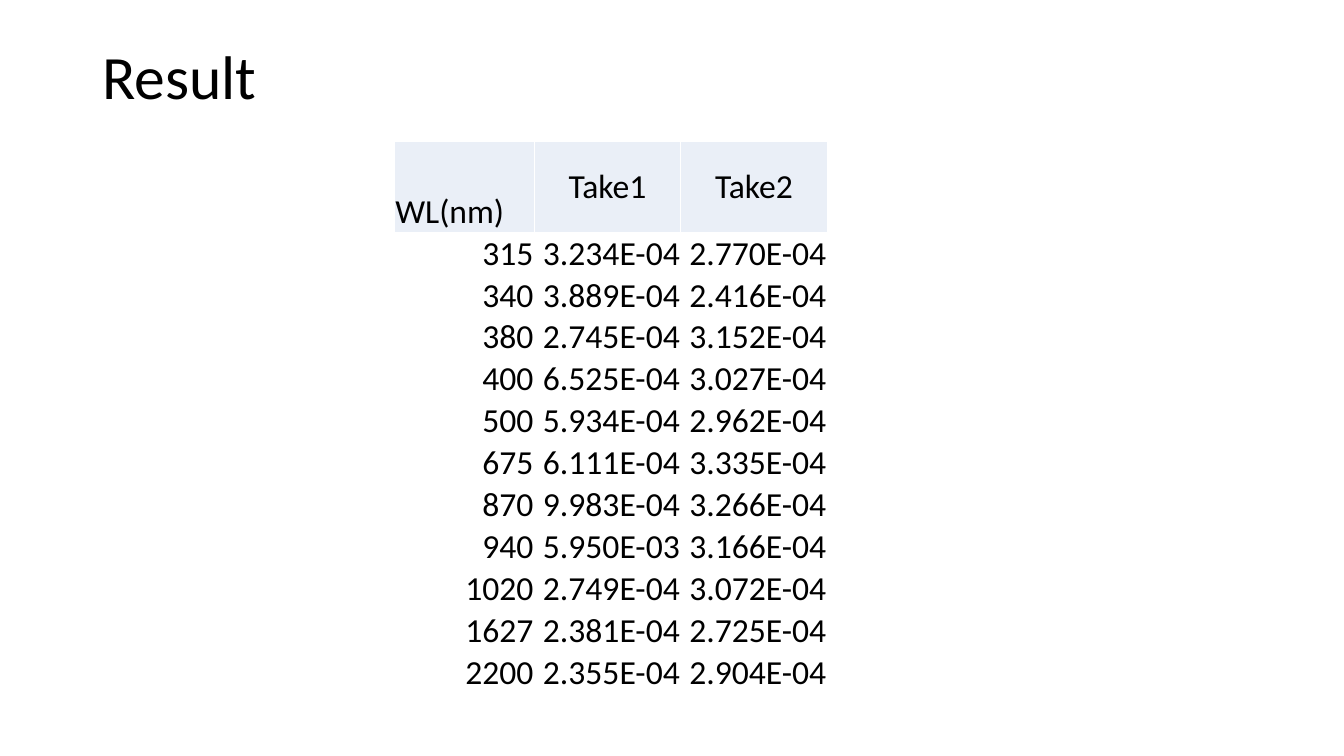
from lxml.etree import SubElement
from pptx import Presentation
from pptx.dml.color import RGBColor
from pptx.enum.text import MSO_ANCHOR as ANCHOR, PP_ALIGN as ALIGN
from pptx.oxml.ns import qn
from pptx.util import Pt

BLACK = RGBColor(0x00, 0x00, 0x00)
WHITE = RGBColor(0xFF, 0xFF, 0xFF)
HEADER_FILL = RGBColor(0xEA, 0xEF, 0xF7)

HEADER = ["　WL(nm)", "Take1", "Take2"]
READINGS = [
    ("315", "3.234E-04", "2.770E-04"),
    ("340", "3.889E-04", "2.416E-04"),
    ("380", "2.745E-04", "3.152E-04"),
    ("400", "6.525E-04", "3.027E-04"),
    ("500", "5.934E-04", "2.962E-04"),
    ("675", "6.111E-04", "3.335E-04"),
    ("870", "9.983E-04", "3.266E-04"),
    ("940", "5.950E-03", "3.166E-04"),
    ("1020", "2.749E-04", "3.072E-04"),
    ("1627", "2.381E-04", "2.725E-04"),
    ("2200", "2.355E-04", "2.904E-04"),
]


class SlideBuilder:
    """Holds the text style and the current slide."""

    font = "Calibri"
    title_size = 44
    cell_size = 24

    def __init__(self, prs):
        self.s = prs.slides.add_slide(prs.slide_layouts[5])

    def run(self, p, text, size):
        r = p.add_run()
        r.text = text
        r.font.name = self.font
        r.font.size = Pt(size)
        r.font.color.rgb = BLACK

    def title(self, text, x, y, w, h):
        sp = self.s.shapes.title
        sp.left, sp.top, sp.width, sp.height = Pt(x), Pt(y), Pt(w), Pt(h)
        tf = sp.text_frame
        tf.word_wrap = True
        tf.vertical_anchor = ANCHOR.MIDDLE
        p = tf.paragraphs[0]
        p.alignment = ALIGN.LEFT
        p.line_spacing = 0.9
        self.run(p, text, self.title_size)

    def borders(self, cell):
        tc_pr = cell._tc.get_or_add_tcPr()
        for i, side in enumerate(("lnL", "lnR", "lnT", "lnB")):
            ln = tc_pr.makeelement(qn(f"a:{side}"), {"w": str(Pt(1))})
            fill = SubElement(ln, qn("a:solidFill"))
            SubElement(fill, qn("a:srgbClr"), val=str(WHITE))
            tc_pr.insert(i, ln)  # borders come before the cell fill

    def cell(self, cell, text, align, fill=None):
        cell.margin_left = cell.margin_right = cell.margin_top = Pt(0.7)
        cell.margin_bottom = Pt(0)
        cell.vertical_anchor = ANCHOR.MIDDLE
        if fill is None:
            cell.fill.background()
        else:
            cell.fill.solid()
            cell.fill.fore_color.rgb = fill
        self.borders(cell)
        p = cell.text_frame.paragraphs[0]
        p.alignment = align
        self.run(p, text, self.cell_size)

    def table(self, header, rows, x, y, widths, row_height):
        n_rows = len(rows) + 1
        frame = self.s.shapes.add_table(n_rows, len(header), Pt(x), Pt(y),
                                        Pt(sum(widths)), Pt(n_rows * row_height))
        table = frame.table
        table.horz_banding = False
        for column, width in zip(table.columns, widths):
            column.width = Pt(width)
        for row in table.rows:
            row.height = Pt(row_height)
        for j, text in enumerate(header):
            align = ALIGN.CENTER if j else ALIGN.LEFT
            self.cell(table.cell(0, j), text, align, HEADER_FILL)
        for i, values in enumerate(rows, 1):
            for j, text in enumerate(values):
                self.cell(table.cell(i, j), text, ALIGN.RIGHT)


def main():
    prs = Presentation()
    prs.slide_width, prs.slide_height = Pt(960), Pt(540)
    slide = SlideBuilder(prs)

    # Title
    slide.title("Result", 66, 28.8, 828, 55.4)

    # Readings per wavelength; rows grow to fit their text
    slide.table(HEADER, READINGS, 281.7, 101, (100, 104.6, 104.6), 26.6)

    prs.save("out.pptx")


if __name__ == "__main__":
    main()
